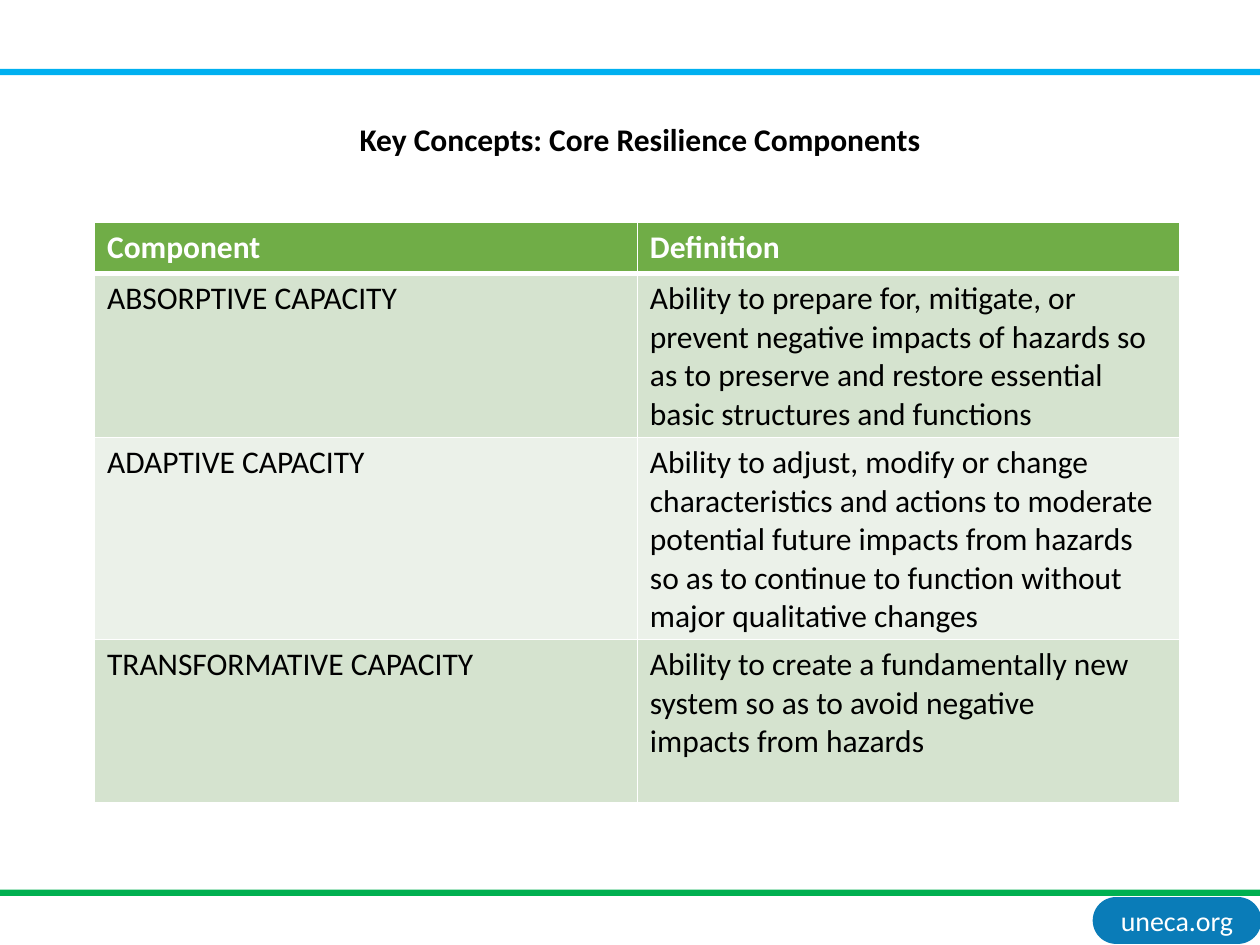
"""Build the slide on core resilience components."""
from dataclasses import dataclass

from lxml.etree import SubElement
from pptx import Presentation
from pptx.dml.color import RGBColor
from pptx.enum.shapes import MSO_SHAPE as SHAPE
from pptx.enum.text import MSO_ANCHOR as ANCHOR, MSO_AUTO_SIZE as AUTO, PP_ALIGN as ALIGN
from pptx.oxml.ns import qn
from pptx.util import Pt

FONT = "Calibri"
WHITE, BLACK = "FFFFFF", "000000"
HEADER_FILL, BANDS = "70AD47", ("D5E3CF", "EBF1E9")


@dataclass
class Box:
    left: float
    top: float
    width: float
    height: float

    def lengths(self) -> tuple:
        return tuple(Pt(v) for v in (self.left, self.top, self.width, self.height))


@dataclass
class Row:
    component: str
    definition: list[str]
    height: float


HEADER = Row("Component", ["Definition"], 29.2)
ROWS = [
    Row("ABSORPTIVE CAPACITY",
        ["Ability to prepare for, mitigate, or prevent negative impacts of hazards "
         "so as to preserve and restore essential basic structures and functions"], 93.6),
    Row("ADAPTIVE CAPACITY",
        ["Ability to adjust, modify or change characteristics and actions to moderate",
         "potential future impacts from hazards so as to continue to function "
         "without major qualitative changes"], 115.4),
    Row("TRANSFORMATIVE CAPACITY",
        ["Ability to create a fundamentally new system so as to avoid negative",
         "impacts from hazards"], 93.2),
]


def rgb(color: str) -> RGBColor:
    return RGBColor.from_string(color)


def write(tf, lines: list[str], size=18, color=BLACK, bold=False, align=ALIGN.LEFT) -> None:
    for i, line in enumerate(lines):
        p = tf.paragraphs[0] if i == 0 else tf.add_paragraph()
        p.alignment = align
        r = p.add_run()
        r.text = line
        r.font.name, r.font.size, r.font.bold = FONT, Pt(size), bold
        r.font.color.rgb = rgb(color)


def add_filled(s, kind, box: Box, color: str):
    sp = s.shapes.add_shape(kind, *box.lengths())
    sp.shadow.inherit = False
    sp.fill.solid()
    sp.fill.fore_color.rgb = rgb(color)
    sp.line.fill.background()
    return sp


def set_borders(cell, top=1, bottom=1) -> None:
    tcPr = cell._tc.get_or_add_tcPr()
    for side, width in (("L", 1), ("R", 1), ("T", top), ("B", bottom)):
        ln = SubElement(tcPr, qn(f"a:ln{side}"), w=str(Pt(width)))
        SubElement(SubElement(ln, qn("a:solidFill")), qn("a:srgbClr"), val=WHITE)


def add_components(s, box: Box) -> None:
    rows = [HEADER, *ROWS]
    table = s.shapes.add_table(len(rows), 2, *box.lengths()).table
    for col in table.columns:
        col.width = Pt(box.width / 2)
    for i, row in enumerate(rows):
        table.rows[i].height = Pt(row.height)
        header = i == 0
        for j, lines in enumerate(([row.component], row.definition)):
            cell = table.cell(i, j)
            set_borders(cell, top=3 if i == 1 else 1, bottom=3 if header else 1)
            cell.fill.solid()
            cell.fill.fore_color.rgb = rgb(HEADER_FILL if header else BANDS[(i - 1) % 2])
            write(cell.text_frame, lines, color=WHITE if header else BLACK, bold=header)


def add_title(s, text: str, box: Box) -> None:
    sp = s.shapes.title
    sp.left, sp.top, sp.width, sp.height = box.lengths()
    tf = sp.text_frame
    tf.word_wrap, tf.auto_size = False, AUTO.SHAPE_TO_FIT_TEXT
    tf.vertical_anchor = ANCHOR.TOP
    write(tf, [text], bold=True, align=ALIGN.CENTER)


def add_badge(s, text: str, box: Box) -> None:
    sp = add_filled(s, SHAPE.ROUNDED_RECTANGLE, box, "0A7CB8")
    sp.adjustments[0] = 0.5
    tf = sp.text_frame
    tf.margin_left = tf.margin_right = tf.margin_top = tf.margin_bottom = Pt(3.6)
    tf.vertical_anchor = ANCHOR.MIDDLE
    write(tf, [text], size=16, color=WHITE, align=ALIGN.CENTER)


def main() -> None:
    prs = Presentation()
    prs.slide_width, prs.slide_height = Pt(720), Pt(540)
    s = prs.slides.add_slide(prs.slide_layouts[5])
    add_badge(s, "uneca.org", Box(624.4, 512.6, 96.4, 26.8))
    for top, color in ((39.4, "00B0F0"), (508.4, "00B050")):
        add_filled(s, SHAPE.RECTANGLE, Box(0, top, 720, 3.6), color)
    add_title(s, "Key Concepts: Core Resilience Components", Box(197.3, 64.8, 337, 29))
    add_components(s, Box(54, 127.2, 620.4, sum(r.height for r in [HEADER, *ROWS])))
    prs.save("out.pptx")


if __name__ == "__main__":
    main()
